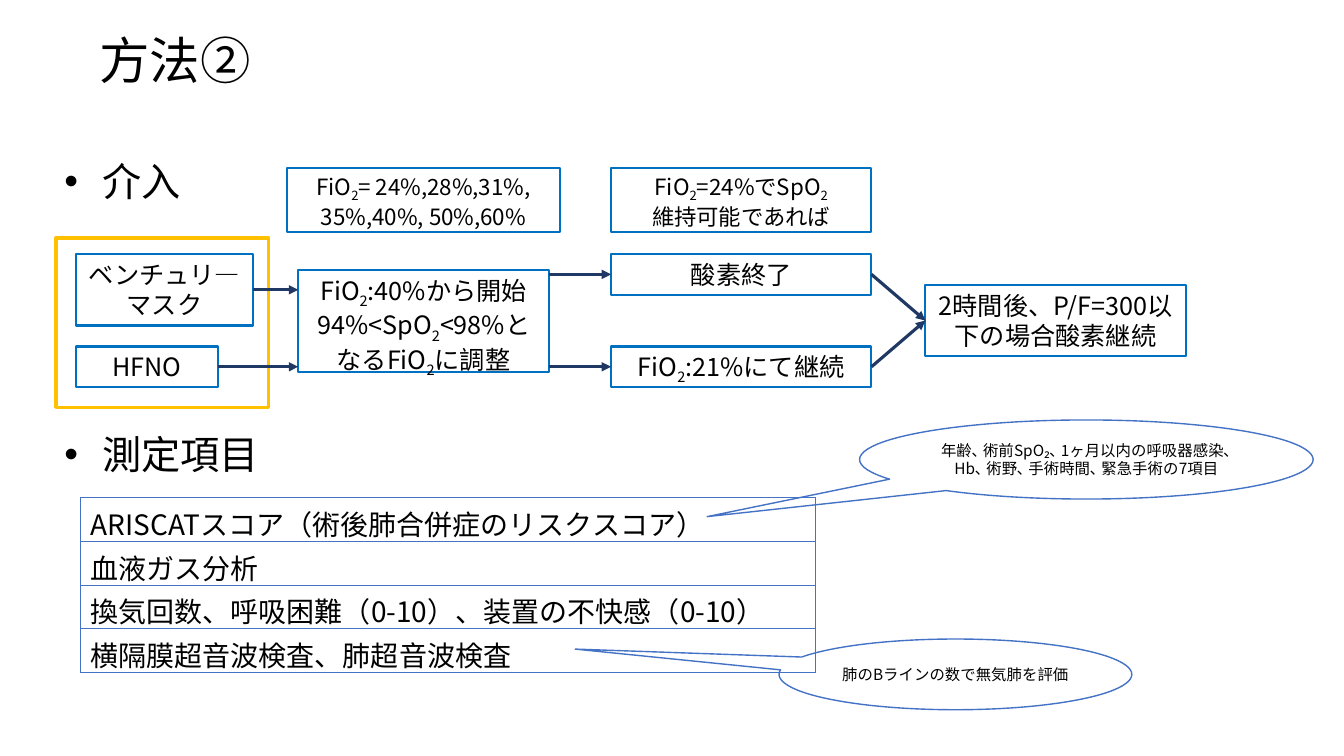
from pptx import Presentation
from pptx.dml.color import RGBColor
from pptx.enum.shapes import MSO_CONNECTOR, MSO_SHAPE
from pptx.enum.text import MSO_ANCHOR, PP_ALIGN
from pptx.oxml.ns import qn
from pptx.util import Pt
from lxml import etree

RECT = MSO_SHAPE.RECTANGLE
CALLOUT = MSO_SHAPE.OVAL_CALLOUT
STRAIGHT = MSO_CONNECTOR.STRAIGHT
TOP, MIDDLE = MSO_ANCHOR.TOP, MSO_ANCHOR.MIDDLE
CENTER, LEFT = PP_ALIGN.CENTER, PP_ALIGN.LEFT
LEFT_SIDE, RIGHT_SIDE = 1, 3
FONT = "Noto Sans CJK JP"
COLORS = {"text": "000000", "step": "0070C0", "arrow": "203864",
          "group": "FFC000", "detail": "4472C4"}


class SlideBuilder:
    """Draws styled elements on one slide, with lengths in points."""

    def __init__(self, slide):
        self.slide = slide

    def color(self, name):
        return RGBColor.from_string(COLORS[name])

    def add_runs(self, paragraph, text, size, align=LEFT):
        paragraph.alignment = align
        for index, part in enumerate(text.split("_")):
            pieces = [(part[:1], True), (part[1:], False)] if index else [(part, False)]
            for piece, subscript in pieces:
                if not piece:
                    continue
                run = paragraph.add_run()
                run.text = piece
                run.font.size = Pt(size)
                run.font.name = FONT
                run.font.color.rgb = self.color("text")
                properties = run._r.get_or_add_rPr()
                etree.SubElement(properties, qn("a:ea")).set("typeface", FONT)
                if subscript:
                    properties.set("baseline", "-25000")

    def fill_frame(self, frame, text, size, align, anchor):
        frame.word_wrap = True
        frame.vertical_anchor = anchor
        for index, line in enumerate(text.split("\n")):
            paragraph = frame.add_paragraph() if index else frame.paragraphs[0]
            self.add_runs(paragraph, line, size, align)

    def title(self, text, box, size):
        frame = self.slide.shapes.add_textbox(*map(Pt, box)).text_frame
        self.fill_frame(frame, text, size, LEFT, MIDDLE)
        frame.paragraphs[0].line_spacing = 0.9

    def headings(self, text, box, size, gap):
        frame = self.slide.shapes.add_textbox(*map(Pt, box)).text_frame
        self.fill_frame(frame, text, size, LEFT, TOP)
        for index, paragraph in enumerate(frame.paragraphs):
            properties = paragraph._p.get_or_add_pPr()
            properties.set("marL", str(Pt(27)))
            properties.set("indent", str(-Pt(27)))
            etree.SubElement(properties, qn("a:buFont")).set("typeface", "Arial")
            etree.SubElement(properties, qn("a:buChar")).set("char", "•")
            if index:
                paragraph.space_before = Pt(gap)

    def shape(self, kind, box, color, width, text="", size=18, anchor=TOP):
        shape = self.slide.shapes.add_shape(kind, *map(Pt, box))
        shape.shadow.inherit = False
        shape.fill.background()
        shape.line.color.rgb = self.color(color)
        shape.line.width = Pt(width)
        if text:
            self.fill_frame(shape.text_frame, text, size, CENTER, anchor)
        return shape

    def step(self, text, box, size=18):
        return self.shape(RECT, box, "step", 1.5, text, size)

    def callout(self, text, box, tip):
        shape = self.shape(CALLOUT, box, "detail", 1, text, 11, MIDDLE)
        shape.adjustments[0], shape.adjustments[1] = tip

    def arrow(self, start, end, source=None, target=None):
        connector = self.slide.shapes.add_connector(STRAIGHT, *map(Pt, start + end))
        if source:
            connector.begin_connect(source, RIGHT_SIDE)
        if target:
            connector.end_connect(target, LEFT_SIDE)
        connector.line.color.rgb = self.color("arrow")
        connector.line.width = Pt(2.25)
        properties = connector._element.spPr
        etree.SubElement(properties.get_or_add_ln(), qn("a:tailEnd")).set("type", "triangle")
        etree.SubElement(properties, qn("a:effectLst"))

    def table(self, rows, box, size):
        table = self.slide.shapes.add_table(len(rows), 1, *map(Pt, box)).table
        table.first_row = table.horz_banding = False
        for index, text in enumerate(rows):
            cell = table.cell(index, 0)
            self.add_runs(cell.text_frame.paragraphs[0], text, size)
            properties = cell._tc.get_or_add_tcPr()
            for side in ("lnL", "lnR", "lnT", "lnB"):
                border = etree.SubElement(properties, qn(f"a:{side}"), w=str(Pt(1)))
                fill = etree.SubElement(border, qn("a:solidFill"))
                etree.SubElement(fill, qn("a:srgbClr"), val=COLORS["detail"])
            cell.fill.background()


def main():
    presentation = Presentation()
    presentation.slide_width, presentation.slide_height = Pt(960), Pt(540)
    builder = SlideBuilder(presentation.slides.add_slide(presentation.slide_layouts[6]))

    builder.title("方法②", (64, 28, 628, 34), 36)
    builder.headings("介入\n測定項目", (39, 109, 379, 269), 28, 161)

    upper_y, lower_y = 196, 262
    venturi = builder.step("ベンチュリ―マスク", (54, 181.5, 127, 51))
    adjust = (213, 193, 179, 73)
    builder.step("FiO_2:40%から開始\n94%<SpO_2<98%となるFiO_2に調整", adjust)
    builder.step("FiO_2= 24%,28%,31%,\n35%,40%, 50%,60%", (205, 120, 195, 46), 16)
    builder.step("FiO_2=24%でSpO_2\n維持可能であれば", (436.5, 120, 186, 46), 16)
    follow_up = builder.step("2時間後、P/F=300以下の場合酸素継続", (661, 203.5, 186, 51))
    builder.shape(RECT, (40, 170, 152, 121), "group", 2.25)
    hfno = builder.step("HFNO", (54, lower_y - 14.5, 101.5, 29))
    stop = builder.step("酸素終了", (436.5, upper_y - 14.5, 186, 29))
    go_on = builder.step("FiO_2:21%にて継続", (436.5, lower_y - 14.5, 186, 29))

    adjust_left, adjust_right = adjust[0], adjust[0] + adjust[2]
    for device, y in ((venturi, 207), (hfno, lower_y)):
        builder.arrow((181, y), (adjust_left, y), source=device)
    for outcome, y in ((stop, upper_y), (go_on, lower_y)):
        builder.arrow((adjust_right, y), (436.5, y), target=outcome)
        builder.arrow((622.5, y), (661, 229), outcome, follow_up)

    builder.table(["ARISCATスコア（術後肺合併症のリスクスコア）",
                   "血液ガス分析",
                   "換気回数、呼吸困難（0-10）、装置の不快感（0-10）",
                   "横隔膜超音波検査、肺超音波検査"], (57.5, 355.5, 525, 125), 20)
    builder.callout("年齢､ 術前SpO₂､ 1ヶ月以内の呼吸器感染､ Hb､ 術野､ 手術時間､ 緊急手術の7項目",
                    (614, 300, 324, 56.5), (-0.836, 0.722))
    builder.callout("肺のBラインの数で無気肺を評価", (556.5, 456.5, 252, 50.5), (-1.078, -0.358))
    presentation.save("out.pptx")


if __name__ == "__main__":
    main()
